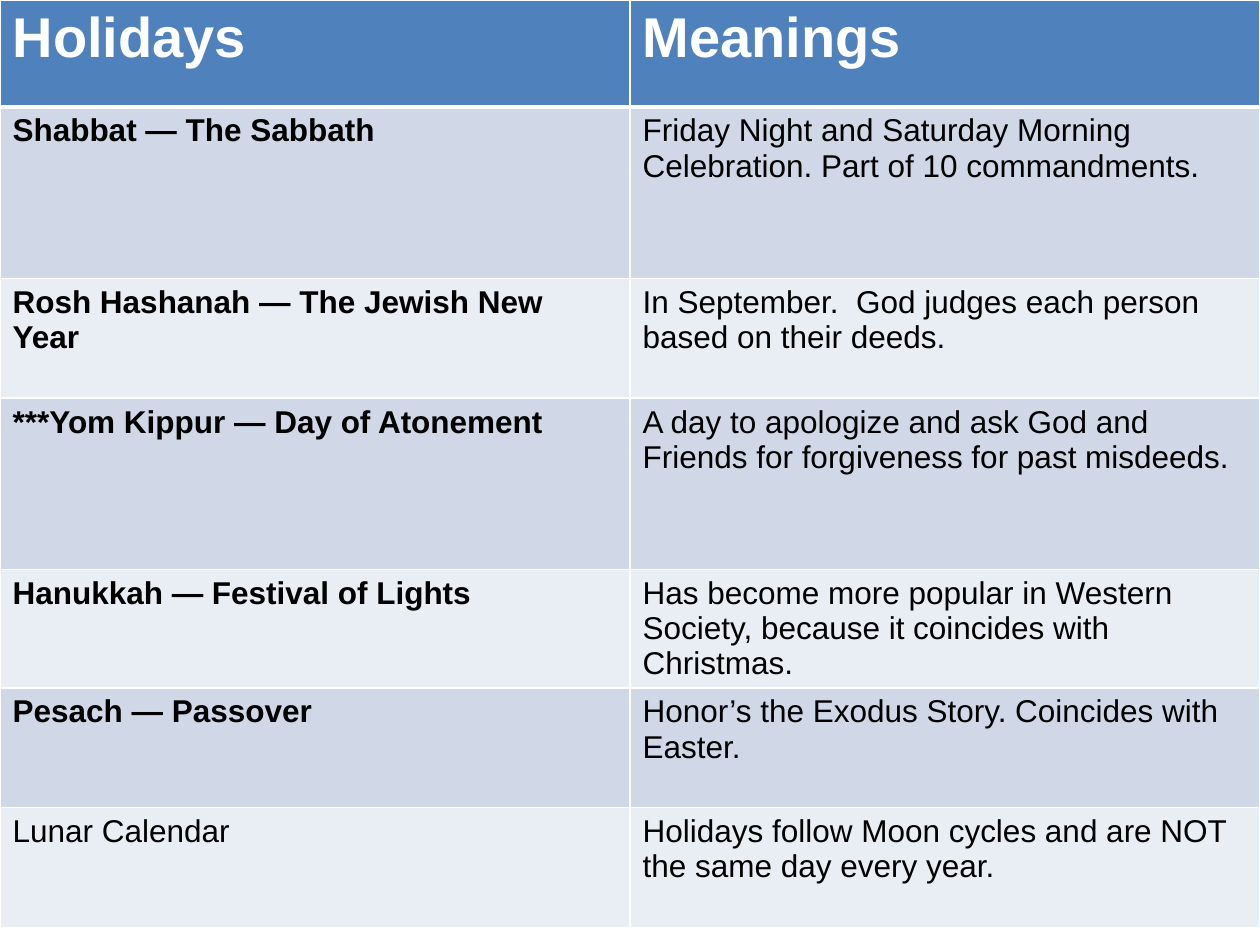
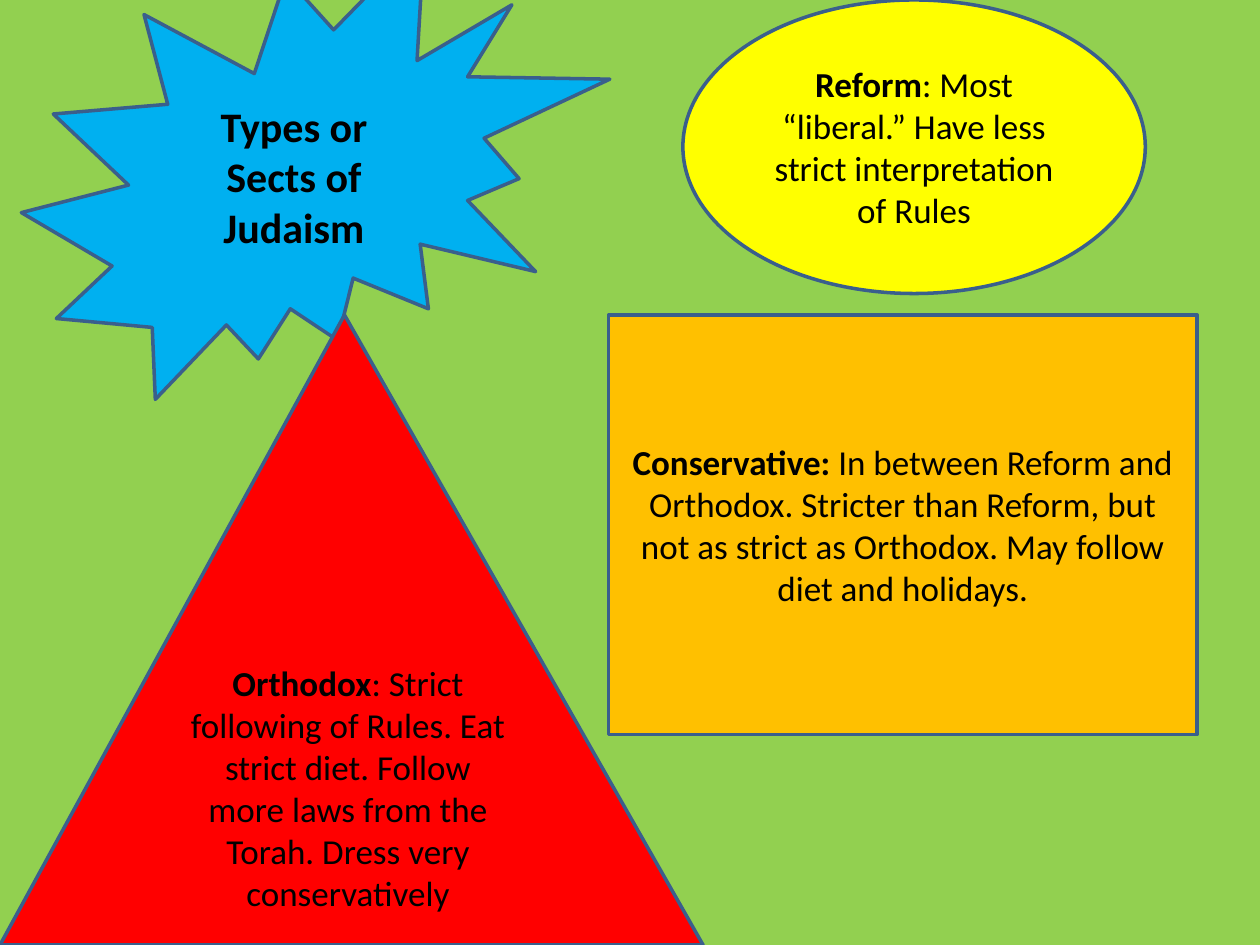
from lxml import etree
from pptx import Presentation
from pptx.dml.color import RGBColor
from pptx.enum import shapes as kinds, text as aligns
from pptx.oxml import ns
from pptx.util import Inches, Pt

# Shared colours
WHITE, BLACK = "FFFFFF", "000000"
HEAD, BANDS = "4F81BD", ("D0D8E8", "E9EDF4")
GREEN, EDGE = "92D050", "3A5F8C"

# Table content
HEADS = ("Holidays", "Meanings")
DAYS = [
    ("Shabbat — The Sabbath",
     "Friday Night and Saturday Morning Celebration. Part of 10 commandments."),
    ("Rosh Hashanah — The Jewish New Year",
     "In September.  God judges each person based on their deeds."),
    ("***Yom Kippur — Day of Atonement",
     "A day to apologize and ask God and Friends for forgiveness for past misdeeds."),
    ("Hanukkah — Festival of Lights",
     "Has become more popular in Western Society, because it coincides with Christmas."),
    ("Pesach — Passover",
     "Honor’s the Exodus Story. Coincides with Easter."),
    ("Lunar Calendar",
     "Holidays follow Moon cycles and are NOT the same day every year."),
]
PLAIN = "Lunar Calendar"
ROWS = (0.85, 1.36, 0.95, 1.36, 0.85, 0.95, 0.95)

# Sects: preset, box, fill, size, bold text, plain text
KIND = kinds.MSO_SHAPE
SECTS = [
    (KIND.EXPLOSION2, (0.17, -0.5, 4.67, 3.67), "00B0F0", 24,
     "Types or Sects of Judaism", ""),
    (KIND.OVAL, (5.42, 0, 3.67, 2.33), "FFFF00", 20, "Reform",
     ": Most “liberal.” Have less strict interpretation of Rules"),
    (KIND.ISOSCELES_TRIANGLE, (0, 2.5, 5.58, 5), "FF0000", 20, "Orthodox",
     ": Strict following of Rules. Eat strict diet. Follow more laws "
     "from the Torah. Dress very conservatively"),
    (KIND.RECTANGLE, (4.83, 2.5, 4.67, 3.33), "FFC000", 20, "Conservative: ",
     "In between Reform and Orthodox. Stricter than Reform, but not as strict "
     "as Orthodox. May follow diet and holidays."),
]


def paint(fill, tone):
    fill.solid()
    fill.fore_color.rgb = RGBColor.from_string(tone)


def style(run, face, size, tone, bold):
    font = run.font
    font.name, font.size, font.bold = face, Pt(size), bold
    font.color.rgb = RGBColor.from_string(tone)


def add_page(deck, tone):
    page = deck.slides.add_slide(deck.slide_layouts[6])
    paint(page.background.fill, tone)
    return page


def rule_cell(cell, base):
    """White rules on all sides; the bottom one has its own width."""
    props = cell._tc.get_or_add_tcPr()
    sides = (("lnL", 1), ("lnR", 1), ("lnT", 1), ("lnB", base))
    for spot, (side, width) in enumerate(sides):
        line = etree.Element(ns.qn("a:" + side), w=str(Pt(width)))
        fill = etree.SubElement(line, ns.qn("a:solidFill"))
        etree.SubElement(fill, ns.qn("a:srgbClr"), val=WHITE)
        props.insert(spot, line)


def fill_cell(cell, words, tone, size, ink, bold, base):
    cell.text_frame.text = words
    style(cell.text_frame.paragraphs[0].runs[0], "Arial", size, ink, bold)
    paint(cell.fill, tone)
    rule_cell(cell, base)


def add_days(page, left, top, width):
    """Holiday table: header row, then banded rows."""
    frame = page.shapes.add_table(
        len(ROWS), len(HEADS), Inches(left), Inches(top),
        Inches(width), Inches(sum(ROWS)))
    table = frame.table
    for col in table.columns:
        col.width = Inches(width / len(HEADS))
    for row, height in zip(table.rows, ROWS):
        row.height = Inches(height)
    for col, words in enumerate(HEADS):
        fill_cell(table.cell(0, col), words, HEAD, 32, WHITE, True, 3)
    for row, pair in enumerate(DAYS, 1):
        for col, words in enumerate(pair):
            bold = col == 0 and words != PLAIN
            cell = table.cell(row, col)
            fill_cell(cell, words, BANDS[(row - 1) % 2], 18, BLACK, bold, 1)
            if row == 1:
                # Match the heavy rule under the header
                top = cell._tc.tcPr.find(ns.qn("a:lnT"))
                top.set("w", str(Pt(3)))


def add_sect(page, kind, box, tone, size, name, words):
    """Outlined shape with a bold name and plain details."""
    shape = page.shapes.add_shape(kind, *map(Inches, box))
    shape.shadow.inherit = False
    paint(shape.fill, tone)
    paint(shape.line.fill, EDGE)
    shape.line.width = Pt(2)
    frame = shape.text_frame
    frame.word_wrap = True
    frame.vertical_anchor = aligns.MSO_ANCHOR.MIDDLE
    para = frame.paragraphs[0]
    para.alignment = aligns.PP_ALIGN.CENTER
    for part, bold in ((name, True), (words, False)):
        if part:
            run = para.add_run()
            run.text = part
            style(run, "Calibri", size, BLACK, bold)
    return shape


def main():
    deck = Presentation()
    deck.slide_width, deck.slide_height = Inches(10), Inches(7.5)

    # Holidays
    add_days(add_page(deck, WHITE), 0, 0, 10)

    # Sects
    page = add_page(deck, GREEN)
    for sect in SECTS:
        shape = add_sect(page, *sect)
        if sect[0] == KIND.ISOSCELES_TRIANGLE:
            shape.adjustments[0] = 0.49

    deck.save("out.pptx")


if __name__ == "__main__":
    main()
